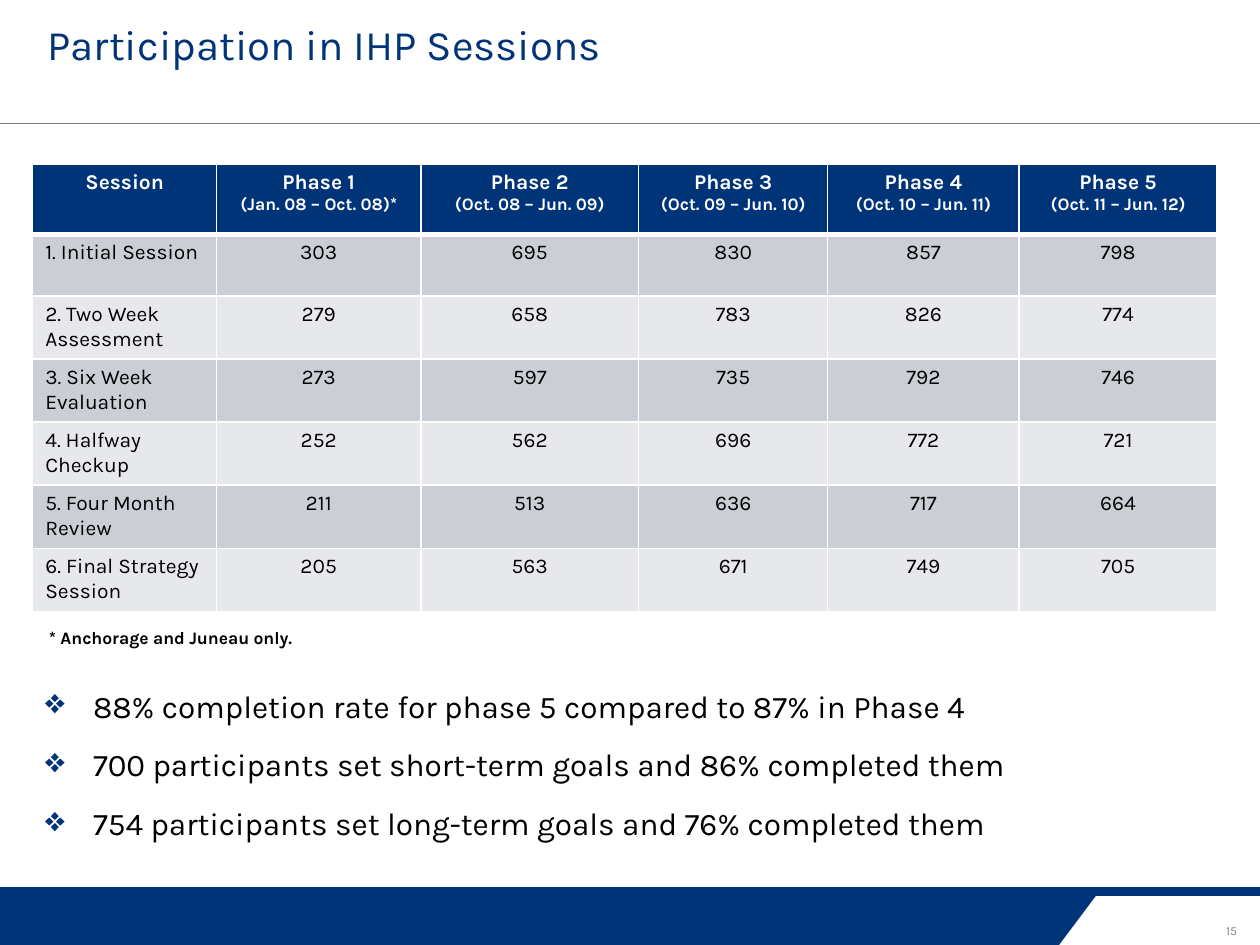
from dataclasses import dataclass

from lxml import etree
from pptx import Presentation
from pptx.dml.color import RGBColor
from pptx.enum.shapes import MSO_CONNECTOR, MSO_SHAPE
from pptx.enum.text import MSO_ANCHOR, PP_ALIGN
from pptx.oxml.ns import qn
from pptx.util import Inches, Pt

STRAIGHT = MSO_CONNECTOR.STRAIGHT
RECTANGLE, PARALLELOGRAM = MSO_SHAPE.RECTANGLE, MSO_SHAPE.PARALLELOGRAM
TOP = MSO_ANCHOR.TOP
LEFT, CENTER = PP_ALIGN.LEFT, PP_ALIGN.CENTER


@dataclass(frozen=True)
class Theme:
    font: str = "Karla"
    navy: str = "003478"
    white: str = "FFFFFF"
    black: str = "000000"
    rule: str = "808080"
    number: str = "8D817B"
    band_dark: str = "CCCED6"
    band_light: str = "E7E8EC"
    title: float = 24
    bullet: float = 18
    body: float = 12
    small: float = 10
    page: float = 7


@dataclass(frozen=True)
class Box:
    left: float
    top: float
    width: float
    height: float

    def lengths(self):
        return [Inches(v) for v in (self.left, self.top, self.width, self.height)]


@dataclass(frozen=True)
class Style:
    size: float
    color: str
    bold: bool = False
    align: PP_ALIGN = LEFT


@dataclass(frozen=True)
class Bar:
    kind: MSO_SHAPE
    box: Box


@dataclass(frozen=True)
class Phase:
    name: str
    dates: str
    width: float
    counts: tuple


THEME = Theme()
SESSION_WIDTH, HEADER_HEIGHT, ROW_HEIGHT = 1.46, 0.56, 0.49
SESSIONS = [
    "1. Initial Session",
    "2. Two Week Assessment",
    "3. Six Week Evaluation",
    "4. Halfway Checkup",
    "5. Four Month Review",
    "6. Final Strategy Session",
]
PHASES = [
    Phase("Phase 1", "(Jan. 08 – Oct. 08)*", 1.62, (303, 279, 273, 252, 211, 205)),
    Phase("Phase 2", "(Oct. 08 – Jun. 09)", 1.73, (695, 658, 597, 562, 513, 563)),
    Phase("Phase 3", "(Oct. 09 – Jun. 10)", 1.5, (830, 783, 735, 696, 636, 671)),
    Phase("Phase 4", "(Oct. 10 – Jun. 11)", 1.52, (857, 826, 792, 772, 717, 749)),
    Phase("Phase 5", "(Oct. 11 – Jun. 12)", 1.57, (798, 774, 746, 721, 664, 705)),
]
BULLETS = [
    "88% completion rate for phase 5 compared to 87% in Phase 4",
    "700 participants set short-term goals and 86% completed them",
    "754 participants set long-term goals and 76% completed them",
]
FOOTER_BARS = [
    Bar(RECTANGLE, Box(0, 7.04, 10, 0.07)),
    Bar(PARALLELOGRAM, Box(0, 7.04, 8.75, 0.46)),
    Bar(RECTANGLE, Box(0, 7.04, 5.61, 0.46)),
]


def rgb(color: str) -> RGBColor:
    return RGBColor.from_string(color)


def write(p, text: str, style: Style) -> None:
    p.text = text
    p.alignment = style.align
    for r in p.runs:
        r.font.name = THEME.font
        r.font.size = Pt(style.size)
        r.font.bold = style.bold
        r.font.color.rgb = rgb(style.color)


def add_text(s, box: Box, text: str, style: Style, wrap: bool = True):
    tf = s.shapes.add_textbox(*box.lengths()).text_frame
    tf.word_wrap = wrap
    tf.vertical_anchor = TOP
    write(tf.paragraphs[0], text, style)
    return tf


def add_bar(s, bar: Bar) -> None:
    sp = s.shapes.add_shape(bar.kind, *bar.box.lengths())
    sp.shadow.inherit = False
    sp.fill.solid()
    sp.fill.fore_color.rgb = rgb(THEME.navy)
    sp.line.fill.background()
    if bar.kind == PARALLELOGRAM:
        sp.adjustments[0] = 0.75


def add_rule(s, y: float) -> None:
    line = s.shapes.add_connector(STRAIGHT, 0, Inches(y), Inches(10), Inches(y))
    line.line.color.rgb = rgb(THEME.rule)
    line.line.width = Pt(0.75)
    etree.SubElement(line._element.spPr, qn("a:effectLst"))


def set_borders(cell, bottom: float) -> None:
    tc_pr = cell._tc.get_or_add_tcPr()
    for side, width in (("L", 1), ("R", 1), ("T", 1), ("B", bottom)):
        ln = etree.SubElement(tc_pr, qn(f"a:ln{side}"), w=str(Pt(width)))
        fill = etree.SubElement(ln, qn("a:solidFill"))
        etree.SubElement(fill, qn("a:srgbClr"), val=THEME.white)


def fill_cell(cell, color: str, lines: list, bottom: float = 1) -> None:
    set_borders(cell, bottom)
    cell.fill.solid()
    cell.fill.fore_color.rgb = rgb(color)
    tf = cell.text_frame
    tf.text = "\n".join(text for text, _ in lines)
    for p, (text, style) in zip(tf.paragraphs, lines):
        write(p, text, style)


def add_sessions_table(s, left: float, top: float) -> None:
    widths = [SESSION_WIDTH] + [phase.width for phase in PHASES]
    heights = [HEADER_HEIGHT] + [ROW_HEIGHT] * len(SESSIONS)
    box = Box(left, top, sum(widths), sum(heights))
    table = s.shapes.add_table(len(heights), len(widths), *box.lengths()).table
    for column, width in zip(table.columns, widths):
        column.width = Inches(width)
    for row, height in zip(table.rows, heights):
        row.height = Inches(height)

    head = Style(THEME.body, THEME.white, True, CENTER)
    dates = Style(THEME.small, THEME.white, True, CENTER)
    label = Style(THEME.body, THEME.black)
    count = Style(THEME.body, THEME.black, align=CENTER)
    fill_cell(table.cell(0, 0), THEME.navy, [("Session", head)], 3)
    for c, phase in enumerate(PHASES, 1):
        fill_cell(table.cell(0, c), THEME.navy, [(phase.name, head), (phase.dates, dates)], 3)
    for i, session in enumerate(SESSIONS):
        band = THEME.band_light if i % 2 else THEME.band_dark
        fill_cell(table.cell(i + 1, 0), band, [(session, label)])
        for c, phase in enumerate(PHASES, 1):
            fill_cell(table.cell(i + 1, c), band, [(str(phase.counts[i]), count)])


def add_bullets(s, box: Box, items: list) -> None:
    style = Style(THEME.bullet, THEME.black)
    tf = add_text(s, box, items[0], style)
    for i, item in enumerate(items):
        p = tf.add_paragraph() if i else tf.paragraphs[0]
        p_pr = p._p.get_or_add_pPr()
        p_pr.set("marL", str(Inches(0.38)))
        p_pr.set("indent", str(Inches(-0.38)))
        color = etree.SubElement(p_pr, qn("a:buClr"))
        etree.SubElement(color, qn("a:srgbClr"), val=THEME.navy)
        etree.SubElement(p_pr, qn("a:buSzPct"), val="110000")
        etree.SubElement(p_pr, qn("a:buChar"), char="❖")
        p.space_before = Pt(6 if i else 0)
        p.space_after = Pt(6)
        write(p, item, style)


def main() -> None:
    prs = Presentation()
    prs.slide_width, prs.slide_height = Inches(10), Inches(7.5)
    s = prs.slides.add_slide(prs.slide_layouts[6])
    add_text(s, Box(9.6, 7.28, 0.35, 0.22), "15",
             Style(THEME.page, THEME.number, align=CENTER), wrap=False)
    add_rule(s, 0.98)
    for bar in FOOTER_BARS:
        add_bar(s, bar)
    add_text(s, Box(0.28, 0.1, 9.33, 0.84), "Participation in IHP Sessions",
             Style(THEME.title, THEME.navy))
    add_sessions_table(s, 0.26, 1.3)
    add_text(s, Box(0.29, 4.93, 8.79, 0.27), "* Anchorage and Juneau only.",
             Style(THEME.small, THEME.black, True))
    add_bullets(s, Box(0.26, 5.4, 9.39, 1.53), BULLETS)
    prs.save("out.pptx")


if __name__ == "__main__":
    main()
